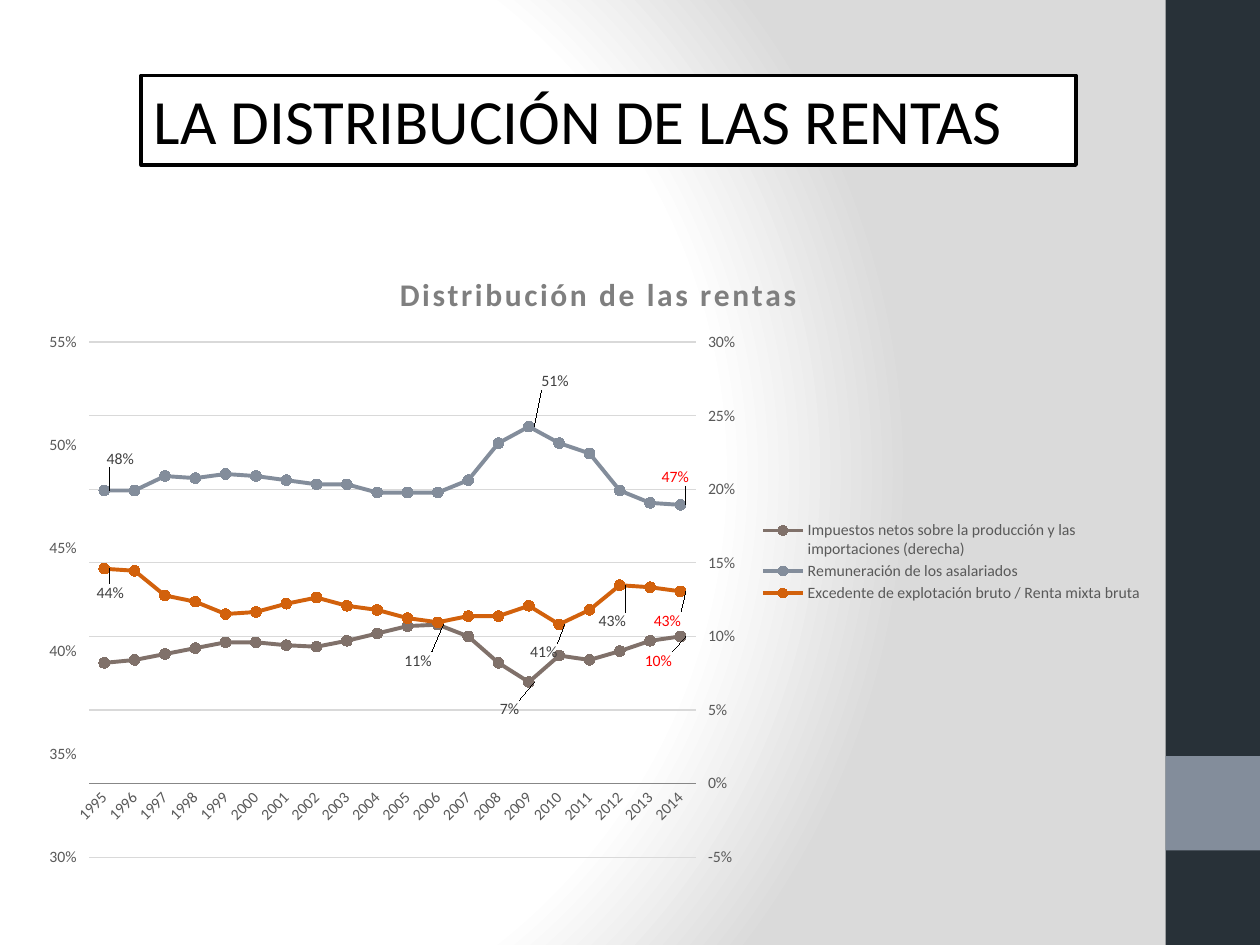
from copy import deepcopy
from dataclasses import dataclass

from lxml import etree
from pptx import Presentation
from pptx import util as u
from pptx.chart.data import CategoryChartData
from pptx.dml.color import RGBColor
from pptx.enum import chart as kinds
from pptx.enum import shapes, text
from pptx.oxml import parse_xml
from pptx.oxml.ns import nsdecls, qn


@dataclass(frozen=True)
class Theme:
    font: str = "Calibri"
    white: str = "FFFFFF"
    black: str = "000000"
    shade: str = "DADADA"
    dark: str = "283138"
    slate: str = "838D9B"
    taupe: str = "80716A"
    orange: str = "D2610C"
    red: str = "FF0000"
    heading: str = "7F7F7F"
    label: str = "404040"
    axis: str = "595959"
    axis_line: str = "BFBFBF"
    grid: str = "D9D9D9"
    title_size: int = 36
    heading_size: int = 18
    chart_size: int = 10
    small_size: int = 9


THEME = Theme()
FIRST_YEAR = 1995

SERIES = [
    ("Impuestos netos sobre la producción y las importaciones (derecha)", THEME.taupe,
     [0.082, 0.084, 0.088, 0.092, 0.096, 0.096, 0.094, 0.093, 0.097, 0.102,
      0.107, 0.108, 0.1, 0.082, 0.069, 0.087, 0.084, 0.09, 0.097, 0.1],
     {2006: (-0.039, 0.057), 2009: (-0.035, 0.043), 2014: (-0.041, 0.039)}),
    ("Remuneración de los asalariados", THEME.slate,
     [0.478, 0.478, 0.485, 0.484, 0.486, 0.485, 0.483, 0.481, 0.481, 0.477,
      0.477, 0.477, 0.483, 0.501, 0.509, 0.501, 0.496, 0.478, 0.472, 0.471],
     {1995: (-0.007, -0.05), 2009: (0.002, -0.071), 2014: (-0.026, -0.044)}),
    ("Excedente de explotación bruto / Renta mixta bruta", THEME.orange,
     [0.44, 0.439, 0.427, 0.424, 0.418, 0.419, 0.423, 0.426, 0.422, 0.42,
      0.416, 0.414, 0.417, 0.417, 0.422, 0.413, 0.42, 0.432, 0.431, 0.429],
     {1995: (-0.016, 0.038), 2010: (-0.035, 0.044), 2012: (-0.028, 0.057),
      2014: (-0.033, 0.047)}),
]


def rgb(color):
    return RGBColor.from_string(color)


def set_font(font, size, color, bold=False):
    font.name = THEME.font
    font.size = u.Pt(size)
    font.color.rgb = rgb(color)
    font.bold = bold


def set_line(line, color, width):
    line.color.rgb = rgb(color)
    line.width = u.Pt(width)


def set_layout(parent, position, index, **lengths):
    for old in parent.findall(qn("c:layout")):
        parent.remove(old)
    layout = etree.Element(qn("c:layout"))
    manual = etree.SubElement(layout, qn("c:manualLayout"))
    for name, value in lengths.items():
        etree.SubElement(manual, qn(f"c:{name}")).set("val", str(value))
    parent.insert(index, layout)
    if position:
        modes = [("layoutTarget", "inner")] if position == "inner" else []
        modes += [("xMode", "edge"), ("yMode", "edge")]
        for place, (name, value) in enumerate(modes):
            mode = etree.Element(qn(f"c:{name}"))
            mode.set("val", value)
            manual.insert(place, mode)


def paint_background(page):
    page.background.fill.solid()
    solid = page.background._cSld.find(".//" + qn("a:solidFill"))
    stops = [(0, THEME.white), (75, THEME.white), (100, THEME.shade)]
    marks = "".join(f'<a:gs pos="{at * 1000}"><a:srgbClr val="{color}"/></a:gs>'
                    for at, color in stops)
    gradient = parse_xml(
        f'<a:gradFill {nsdecls("a")} rotWithShape="1"><a:gsLst>{marks}</a:gsLst>'
        '<a:path path="circle"><a:fillToRect l="20000" t="50000" r="100000" b="50000"/>'
        '</a:path></a:gradFill>')
    solid.getparent().replace(solid, gradient)


def add_sidebar(page, left, top, width, height):
    accent = (top + u.Inches(6), u.Inches(0.75), THEME.slate)
    for band_top, band_height, color in [(top, height, THEME.dark), accent]:
        band = page.shapes.add_shape(shapes.MSO_SHAPE.RECTANGLE,
                                     left, band_top, width, band_height)
        band.shadow.inherit = False
        band.fill.solid()
        band.fill.fore_color.rgb = rgb(color)
        band.line.fill.background()


def add_title(page, left, top, width, height):
    title = page.shapes.title
    title.left, title.top, title.width, title.height = left, top, width, height
    title.fill.solid()
    title.fill.fore_color.rgb = rgb(THEME.white)
    set_line(title.line, THEME.black, 2)
    frame = title.text_frame
    frame.text = "LA DISTRIBUCIÓN DE LAS RENTAS"
    frame.word_wrap = True
    frame.auto_size = text.MSO_AUTO_SIZE.NONE
    frame.vertical_anchor = text.MSO_ANCHOR.TOP
    para = frame.paragraphs[0]
    para.alignment = text.PP_ALIGN.LEFT
    set_font(para.runs[0].font, THEME.title_size, THEME.black)


def format_axes(chart):
    years, shares = chart.category_axis, chart.value_axis
    for axis in (years, shares):
        set_font(axis.tick_labels.font, THEME.small_size, THEME.axis)
        axis.major_tick_mark = axis.minor_tick_mark = kinds.XL_TICK_MARK.NONE
    years._element.find(qn("c:txPr")).find(qn("a:bodyPr")).set("rot", "-2700000")
    years.has_major_gridlines = False
    shares.major_tick_mark = kinds.XL_TICK_MARK.OUTSIDE
    shares.tick_label_position = kinds.XL_TICK_LABEL_POSITION.HIGH
    shares.minimum_scale, shares.maximum_scale, shares.major_unit = -0.05, 0.3, 0.05
    shares.tick_labels.number_format = "0%"
    shares.tick_labels.number_format_is_linked = False
    shares.format.line.fill.background()
    shares.has_major_gridlines = True
    set_line(shares.major_gridlines.format.line, THEME.grid, 0.75)


def format_series(series, color, offsets):
    series.smooth = False
    set_line(series.format.line, color, 2.25)
    series.marker.style = kinds.XL_MARKER_STYLE.CIRCLE
    series.marker.size = 6
    series.marker.format.fill.solid()
    series.marker.format.fill.fore_color.rgb = rgb(color)
    set_line(series.marker.format.line, color, 0.75)
    series.data_labels.show_value = False
    for year, (across, down) in offsets.items():
        label = series.points[year - FIRST_YEAR].data_label
        set_font(label.font, THEME.small_size, THEME.red if year == 2014 else THEME.label)
        label.position = kinds.XL_LABEL_POSITION.RIGHT
        element = label._get_or_add_dLbl()
        set_layout(element, None, 1, x=across, y=down)
    series.data_labels._element.append(parse_xml(
        f'<c:extLst {nsdecls("c")}><c:ext uri="{{CE6537A1-D6FC-4f65-9D91-7224C49458BB}}" '
        'xmlns:c15="http://schemas.microsoft.com/office/drawing/2012/chart">'
        '<c15:showLeaderLines val="1"/></c:ext></c:extLst>'))


def split_axes(plot_area):
    first = plot_area.find(qn("c:lineChart"))
    second = deepcopy(first)
    for group, unwanted in [(first, slice(1, None)), (second, slice(0, 1))]:
        for series in group.findall(qn("c:ser"))[unwanted]:
            group.remove(series)
    first.addnext(second)
    years, shares = plot_area.find(qn("c:catAx")), plot_area.find(qn("c:valAx"))
    left_shares, hidden_years = deepcopy(shares), deepcopy(years)
    shares.addnext(left_shares)
    left_shares.addnext(hidden_years)
    new_ids = {years.find(qn("c:axId")).get("val"): "5001",
               shares.find(qn("c:axId")).get("val"): "5002"}
    for part in (second, left_shares, hidden_years):
        for mark in part.iter(qn("c:axId"), qn("c:crossAx")):
            mark.set("val", new_ids[mark.get("val")])
    hidden_years.find(qn("c:delete")).set("val", "1")
    left_shares.remove(left_shares.find(qn("c:majorGridlines")))
    for name, value in [("crosses", "min"), ("tickLblPos", "low"), ("majorTickMark", "none")]:
        left_shares.find(qn(f"c:{name}")).set("val", value)
    scaling = left_shares.find(qn("c:scaling"))
    scaling.find(qn("c:min")).set("val", "0.3")
    scaling.find(qn("c:max")).set("val", "0.55")


def add_income_chart(page, left, top, width, height):
    data = CategoryChartData(number_format="0%")
    data.categories = [str(FIRST_YEAR + step) for step in range(20)]
    for name, _, values, _ in SERIES:
        data.add_series(name, values)
    chart = page.shapes.add_chart(kinds.XL_CHART_TYPE.LINE_MARKERS,
                                  left, top, width, height, data).chart
    set_font(chart.font, THEME.chart_size, THEME.black)
    chart.plots[0].vary_by_categories = False
    chart.has_title = True
    frame = chart.chart_title.text_frame
    frame.text = "Distribución de las rentas"
    heading = frame.paragraphs[0].runs[0]
    set_font(heading.font, THEME.heading_size, THEME.heading, bold=True)
    heading.font._element.set("spc", "150")
    set_layout(chart.chart_title._element, "edge", 1, x=0.32, y=0.035)
    chart.has_legend = True
    chart.legend.position = kinds.XL_LEGEND_POSITION.RIGHT
    chart.legend.include_in_layout = False
    set_font(chart.legend.font, THEME.small_size, THEME.axis)
    set_layout(chart.legend._element, "edge", 1, x=0.647, y=0.43, w=0.34, h=0.14)
    format_axes(chart)
    for series, (_, color, _, offsets) in zip(chart.plots[0].series, SERIES):
        format_series(series, color, offsets)
    plot_area = chart._chartSpace.find(".//" + qn("c:plotArea"))
    split_axes(plot_area)
    set_layout(plot_area, "inner", 0, x=0.048, y=0.154, w=0.541, h=0.811)


def main():
    deck = Presentation()
    deck.slide_width, deck.slide_height = u.Inches(10), u.Inches(7.5)
    page = deck.slides.add_slide(deck.slide_layouts[5])
    paint_background(page)
    add_sidebar(page, u.Inches(9.25), 0, u.Inches(0.75), deck.slide_height)
    add_title(page, u.Inches(1.12), u.Inches(0.6), u.Inches(7.42), u.Inches(0.71))
    add_income_chart(page, u.Inches(0.28), u.Inches(1.94), u.Inches(8.9), u.Inches(5.04))
    deck.save("out.pptx")


if __name__ == "__main__":
    main()
